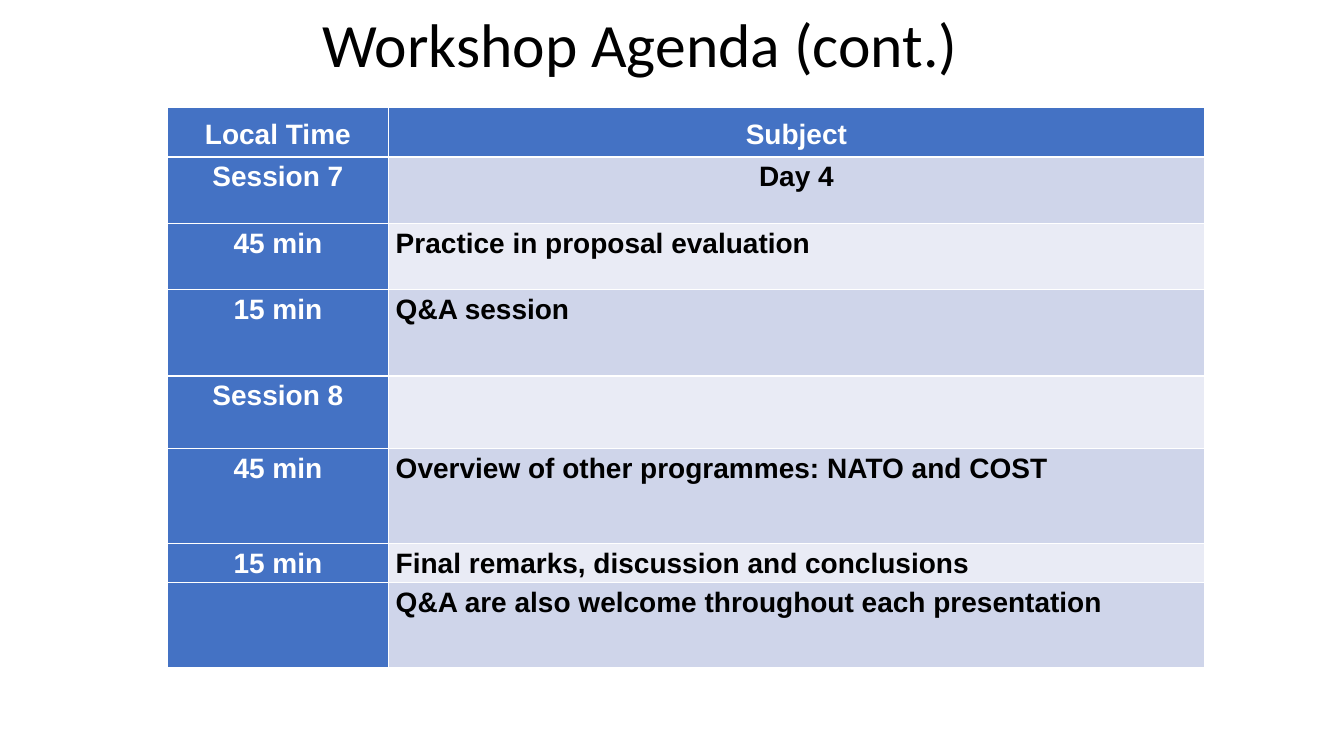
import dataclasses

import lxml.etree
import pptx
import pptx.dml.color
import pptx.enum.text
import pptx.oxml.ns
import pptx.util

Pt = pptx.util.Pt
RGB = pptx.dml.color.RGBColor.from_string
ALIGN = pptx.enum.text.PP_ALIGN
ANCHOR = pptx.enum.text.MSO_ANCHOR


@dataclasses.dataclass(frozen=True)
class Theme:
    title_font: str = "Calibri"
    table_font: str = "Arial"
    title_size: int = 44
    table_size: int = 20
    accent: str = "4472C4"
    bands: tuple = ("CFD5EA", "E9EBF5")
    dark: str = "000000"
    light: str = "FFFFFF"


class AgendaSlide:
    def __init__(self, prs, theme):
        self.theme = theme
        self.s = prs.slides.add_slide(prs.slide_layouts[6])

    def set_text(self, p, text, font, size, color, align, spacing, bold=False):
        p.text = text
        p.alignment = align
        p.line_spacing = spacing
        p.font.name = font
        p.font.size = Pt(size)
        p.font.bold = bold
        p.font.color.rgb = RGB(color)

    def title(self, text, x, y, w, h):
        sp = self.s.shapes.add_textbox(Pt(x), Pt(y), Pt(w), Pt(h))
        tf = sp.text_frame
        tf.word_wrap = True
        tf.vertical_anchor = ANCHOR.MIDDLE
        t = self.theme
        self.set_text(tf.paragraphs[0], text, t.title_font, t.title_size, t.dark, ALIGN.CENTER, 0.9)

    def borders(self, cell):
        tc_pr = cell._tc.get_or_add_tcPr()
        qn = pptx.oxml.ns.qn
        for side in ("L", "R", "T", "B"):
            ln = lxml.etree.SubElement(tc_pr, qn(f"a:ln{side}"), w=str(Pt(1)))
            fill = lxml.etree.SubElement(ln, qn("a:solidFill"))
            lxml.etree.SubElement(fill, qn("a:srgbClr"), val=self.theme.light)

    def cell(self, cell, text, fill, color, align, anchor):
        self.borders(cell)
        cell.fill.solid()
        cell.fill.fore_color.rgb = RGB(fill)
        cell.margin_left = cell.margin_right = Pt(5.4)
        cell.margin_top = cell.margin_bottom = 0
        cell.vertical_anchor = anchor
        p = cell.text_frame.paragraphs[0]
        t = self.theme
        self.set_text(p, text, t.table_font, t.table_size, color, align, 1.15, True)
        p.space_after = Pt(10)

    def agenda(self, rows, x, y, widths, heights):
        t = self.theme
        table = self.s.shapes.add_table(
            len(rows), len(widths), Pt(x), Pt(y), Pt(sum(widths)), Pt(sum(heights))
        ).table
        for column, width in zip(table.columns, widths):
            column.width = Pt(width)
        for i, (texts, height) in enumerate(zip(rows, heights)):
            table.rows[i].height = Pt(height)
            for j, text in enumerate(texts):
                accented = i == 0 or j == 0
                self.cell(
                    table.cell(i, j),
                    text,
                    t.accent if accented else t.bands[(i - 1) % 2],
                    t.light if accented else t.dark,
                    ALIGN.CENTER if accented or i == 1 else ALIGN.LEFT,
                    ANCHOR.MIDDLE if i == 0 else ANCHOR.TOP,
                )


def main():
    prs = pptx.Presentation()
    prs.slide_width, prs.slide_height = Pt(960), Pt(540)
    slide = AgendaSlide(prs, Theme())
    slide.title("Workshop Agenda (cont.)", 150, 3, 615, 62.5)
    rows = [
        ("Local Time", "Subject"),
        ("Session 7", "Day 4"),
        ("45 min", "Practice in proposal evaluation"),
        ("15 min", "Q&A session"),
        ("Session 8", ""),
        ("45 min", "Overview of other programmes: NATO and COST"),
        ("15 min", "Final remarks, discussion and conclusions"),
        ("", "Q&A are also welcome throughout each presentation"),
    ]
    heights = [35.5, 47.5, 47.5, 61.5, 52, 68, 25.7, 60.5]
    slide.agenda(rows, 119.8, 76.6, [157.5, 583.2], heights)
    prs.save("out.pptx")


if __name__ == "__main__":
    main()
